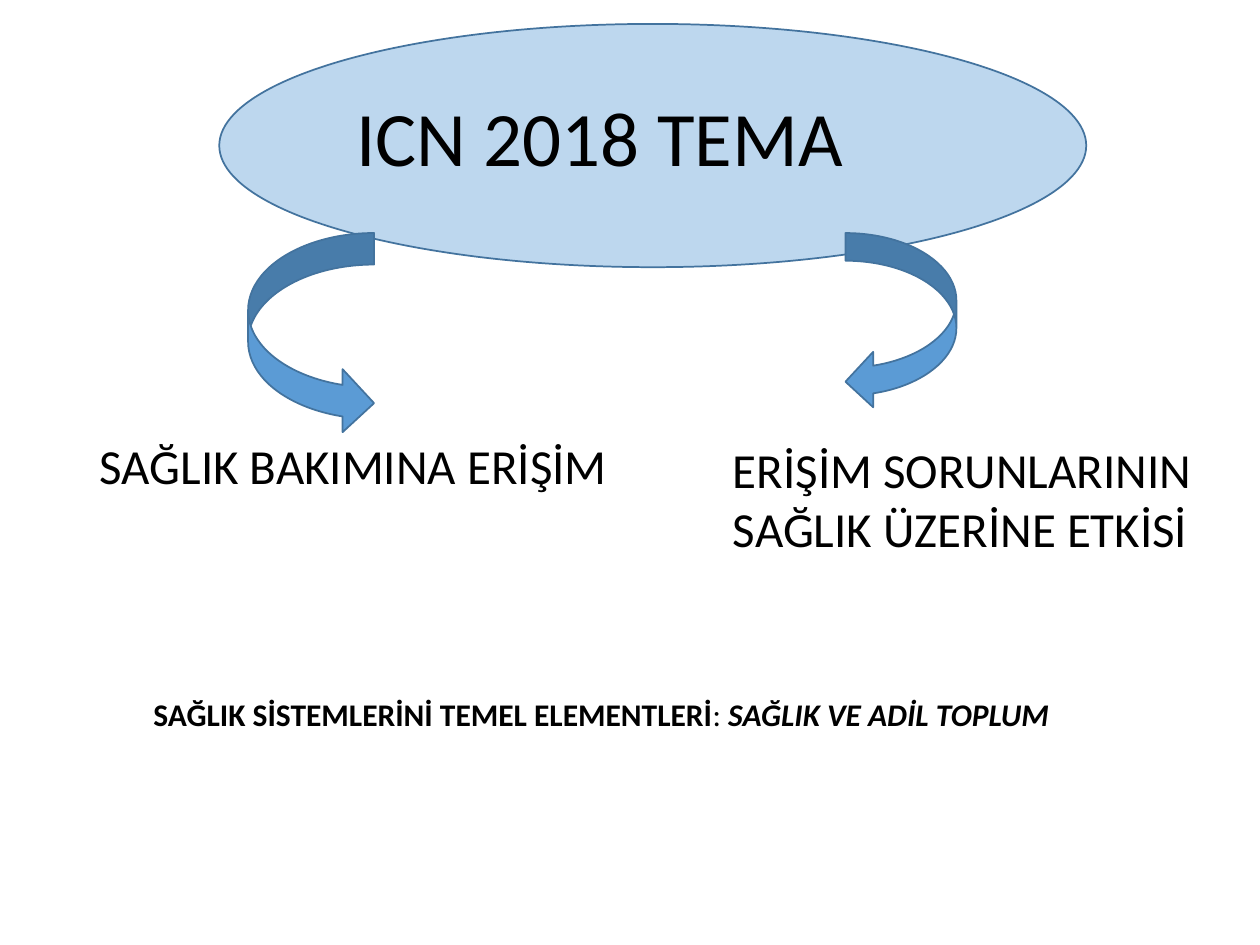
from dataclasses import dataclass

from lxml.etree import SubElement
from pptx import Presentation
from pptx.dml.color import RGBColor
from pptx.enum.shapes import MSO_SHAPE as Preset
from pptx.enum.text import MSO_ANCHOR as Anchor, MSO_AUTO_SIZE as AutoSize, PP_ALIGN as Align
from pptx.oxml.ns import qn
from pptx.util import Pt

BLACK = RGBColor(0x00, 0x00, 0x00)
PALE_BLUE = RGBColor(0xBD, 0xD7, 0xEE)
ARROW_BLUE = RGBColor(0x5B, 0x9B, 0xD5)
OUTLINE_BLUE = RGBColor(0x43, 0x73, 0x9E)
FONT = "Calibri"


@dataclass(frozen=True)
class Box:
    left: float
    top: float
    width: float
    height: float

    def lengths(self):
        return Pt(self.left), Pt(self.top), Pt(self.width), Pt(self.height)


@dataclass(frozen=True)
class Figure:
    preset: Preset
    box: Box
    fill: RGBColor


@dataclass(frozen=True)
class Words:
    text: str
    bold: bool = False
    italic: bool = False


THEME_OVAL = Figure(Preset.OVAL, Box(125.3, 13.7, 495.4, 139), PALE_BLUE)
ARROWS = (
    Figure(Preset.CURVED_RIGHT_ARROW, Box(141.8, 133.2, 72, 115.2), ARROW_BLUE),
    Figure(Preset.CURVED_LEFT_ARROW, Box(483.1, 133.2, 63.4, 100.8), ARROW_BLUE),
)


def add_figure(slide, figure: Figure):
    shape = slide.shapes.add_shape(figure.preset, *figure.box.lengths())
    shape.shadow.inherit = False
    shape.fill.solid()
    shape.fill.fore_color.rgb = figure.fill
    shape.line.color.rgb = OUTLINE_BLUE
    shape.line.width = Pt(1)
    return shape


def write(paragraph, words: tuple[Words, ...], size: float) -> None:
    paragraph.alignment = Align.LEFT
    for part in words:
        run = paragraph.add_run()
        run.text = part.text
        font = run.font
        font.name, font.size = FONT, Pt(size)
        font.bold, font.italic = part.bold, part.italic
        font.color.rgb = BLACK


def fill_placeholder(shape, box: Box, text: str, size: float, anchor: Anchor,
                     margin_left: float, margin_top: float) -> None:
    shape.left, shape.top, shape.width, shape.height = box.lengths()
    frame = shape.text_frame
    frame.auto_size = AutoSize.NONE
    frame.vertical_anchor = anchor
    frame.margin_left, frame.margin_top = Pt(margin_left), Pt(margin_top)
    paragraph = frame.paragraphs[0]
    paragraph.line_spacing = 0.9
    paragraph.space_before = Pt(0)
    write(paragraph, (Words(text),), size)
    # No bullet and no hanging indent
    properties = paragraph._p.get_or_add_pPr()
    properties.set("marL", "0")
    properties.set("indent", "0")
    SubElement(properties, qn("a:buNone"))


def add_label(slide, box: Box, words: tuple[Words, ...], size: float) -> None:
    frame = slide.shapes.add_textbox(*box.lengths()).text_frame
    frame.word_wrap = True
    frame.auto_size = AutoSize.SHAPE_TO_FIT_TEXT
    write(frame.paragraphs[0], words, size)


def main() -> None:
    presentation = Presentation()
    presentation.slide_width, presentation.slide_height = Pt(720), Pt(540)
    slide = presentation.slides.add_slide(presentation.slide_layouts[1])
    title, body = slide.placeholders

    # Theme title on its oval, which lies behind it
    oval = add_figure(slide, THEME_OVAL)
    title.element.addprevious(oval.element)
    fill_placeholder(title, Box(49.7, 28.8, 620.6, 104.4), "ICN 2018 TEMA", 44,
                     Anchor.MIDDLE, margin_left=154, margin_top=3.6)

    # Two branches of the theme
    fill_placeholder(body, Box(49.7, 167.8, 636.5, 327.6), "SAĞLIK BAKIMINA ERİŞİM", 28,
                     Anchor.TOP, margin_left=7.2, margin_top=85)
    for arrow in ARROWS:
        add_figure(slide, arrow)
    add_label(slide, Box(411.8, 247.7, 290.2, 74.9),
              (Words("ERİŞİM SORUNLARININ SAĞLIK ÜZERİNE ETKİSİ"),), 28)

    # Closing statement
    add_label(slide, Box(80.6, 393.8, 553, 28.8), (
        Words("SAĞLIK SİSTEMLERİNİ TEMEL ELEMENTLERİ", bold=True),
        Words(": "),
        Words("SAĞLIK VE ADİL TOPLUM", bold=True, italic=True),
    ), 18)

    presentation.save("out.pptx")


if __name__ == "__main__":
    main()
